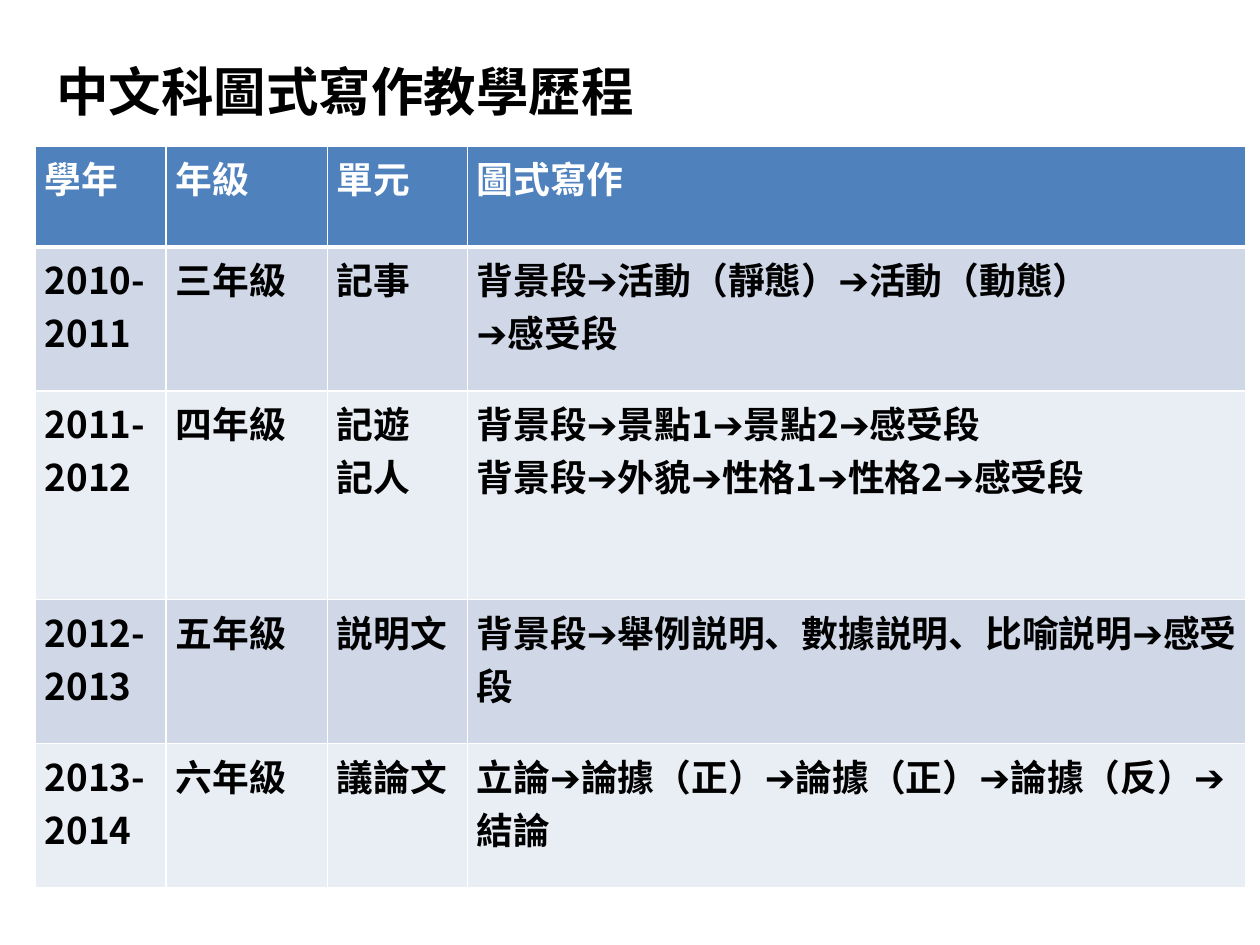
from lxml import etree
from pptx import Presentation
from pptx import util as u
from pptx.dml.color import RGBColor
from pptx.enum import text
from pptx.oxml import ns

TITLE = "中文科圖式寫作教學歷程"
HEADINGS = ["學年", "年級", "單元", "圖式寫作"]
# One row per school year; each cell is a list of paragraphs.
YEARS = [
    (["2010-2011"], ["三年級"], ["記事"],
     ["背景段➔活動（靜態）➔活動（動態）", "➔感受段"]),
    (["2011-2012"], ["四年級"], ["記遊", "記人"],
     ["背景段➔景點1➔景點2➔感受段", "背景段➔外貌➔性格1➔性格2➔感受段"]),
    (["2012-2013"], ["五年級"], ["説明文"],
     ["背景段➔舉例説明、數據説明、比喻説明➔感受段"]),
    (["2013-2014"], ["六年級"], ["議論文"],
     ["立論➔論據（正）➔論據（正）➔論據（反）➔結論"]),
]
COLUMN_WIDTHS = [2.64, 3.25, 2.82, 15.7]
ROW_HEIGHTS = [2.03, 2.9, 4.21, 2.9, 2.9]

THEME = {
    "font": "Noto Sans CJK SC",
    "title_size": 30,
    "table_size": 21,
    "ink": "000000",
    "heading_ink": "FFFFFF",
    "heading_fill": "4F81BD",
    "bands": ["D0D8E8", "E9EDF4"],
    "rule": "FFFFFF",
    "rule_width": 1,
    "heading_rule_width": 3,
}


def write(frame, paragraphs, size, colour):
    for index, words in enumerate(paragraphs):
        paragraph = frame.paragraphs[0] if index == 0 else frame.add_paragraph()
        run = paragraph.add_run()
        run.text = words
        run.font.size = u.Pt(size)
        run.font.bold = True
        run.font.color.rgb = RGBColor.from_string(colour)
        run.font.name = THEME["font"]
        east_asian = etree.SubElement(run._r.get_or_add_rPr(), ns.qn("a:ea"))
        east_asian.set("typeface", THEME["font"])


def rule_cell(cell, widths):
    """Draw left, right, top and bottom rules; they must precede the fill."""
    properties = cell._tc.get_or_add_tcPr()
    for index, (side, width) in enumerate(zip("LRTB", widths)):
        line = etree.Element(ns.qn(f"a:ln{side}"), w=str(u.Pt(width)))
        fill = etree.SubElement(line, ns.qn("a:solidFill"))
        etree.SubElement(fill, ns.qn("a:srgbClr"), val=THEME["rule"])
        properties.insert(index, line)


def add_title(slide):
    title = slide.shapes.add_textbox(u.Cm(0.89), u.Cm(0.91), u.Cm(19.05), u.Cm(1.83))
    frame = title.text_frame
    frame.word_wrap = True
    frame.vertical_anchor = text.MSO_ANCHOR.MIDDLE
    write(frame, [TITLE], THEME["title_size"], THEME["ink"])


def add_history(slide):
    rows = [[[heading] for heading in HEADINGS], *YEARS]
    history = slide.shapes.add_table(
        len(rows), len(HEADINGS), u.Cm(0.71), u.Cm(2.95),
        u.Cm(sum(COLUMN_WIDTHS)), u.Cm(sum(ROW_HEIGHTS))).table
    for column, width in zip(history.columns, COLUMN_WIDTHS):
        column.width = u.Cm(width)
    for row, height in zip(history.rows, ROW_HEIGHTS):
        row.height = u.Cm(height)

    thin, thick = THEME["rule_width"], THEME["heading_rule_width"]
    for r, row in enumerate(rows):
        fill = THEME["bands"][(r - 1) % 2] if r else THEME["heading_fill"]
        ink = THEME["ink"] if r else THEME["heading_ink"]
        top = thick if r == 1 else thin
        bottom = thin if r else thick
        for c, paragraphs in enumerate(row):
            cell = history.cell(r, c)
            cell.margin_left = cell.margin_right = u.Cm(0.19)
            cell.margin_top = cell.margin_bottom = u.Cm(0.1)
            cell.fill.solid()
            cell.fill.fore_color.rgb = RGBColor.from_string(fill)
            rule_cell(cell, (thin, thin, top, bottom))
            write(cell.text_frame, paragraphs, THEME["table_size"], ink)


def main():
    deck = Presentation()
    deck.slide_width, deck.slide_height = u.Cm(25.4), u.Cm(19.05)
    slide = deck.slides.add_slide(deck.slide_layouts[6])
    add_title(slide)
    add_history(slide)
    deck.save("out.pptx")


if __name__ == "__main__":
    main()
